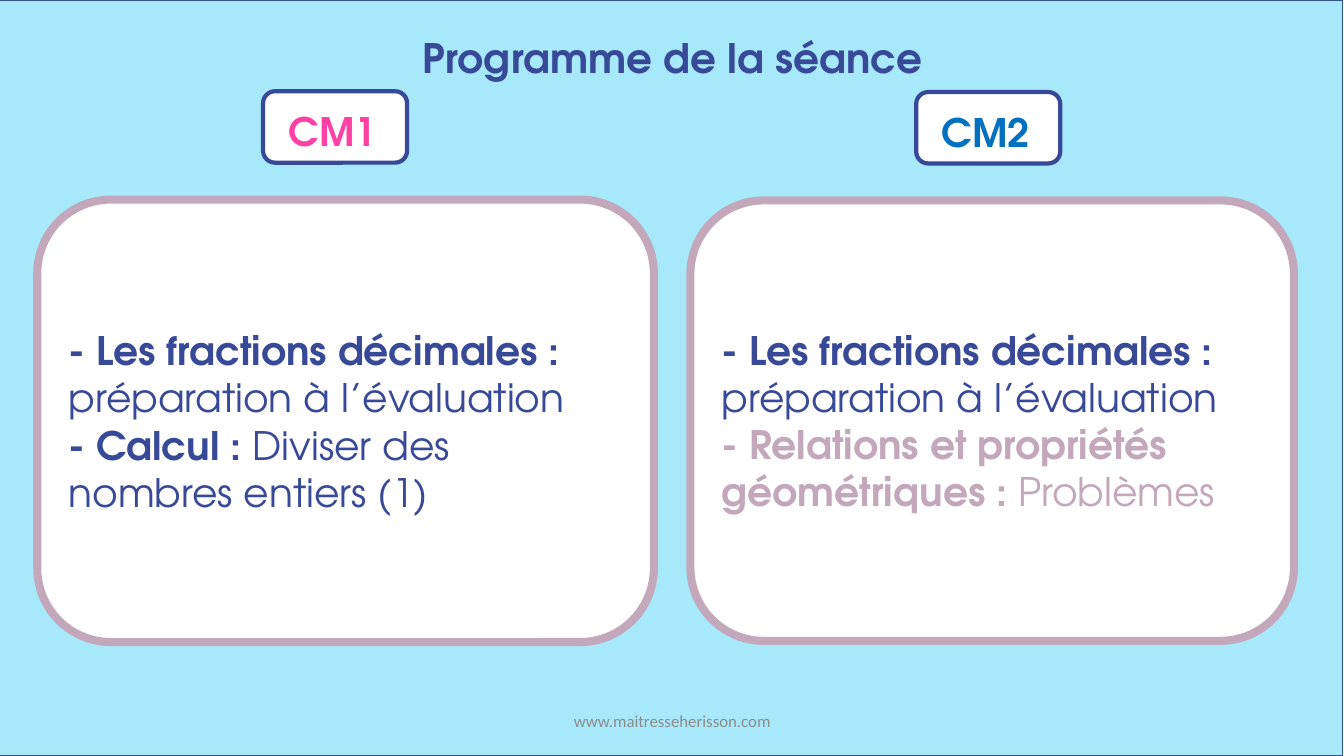
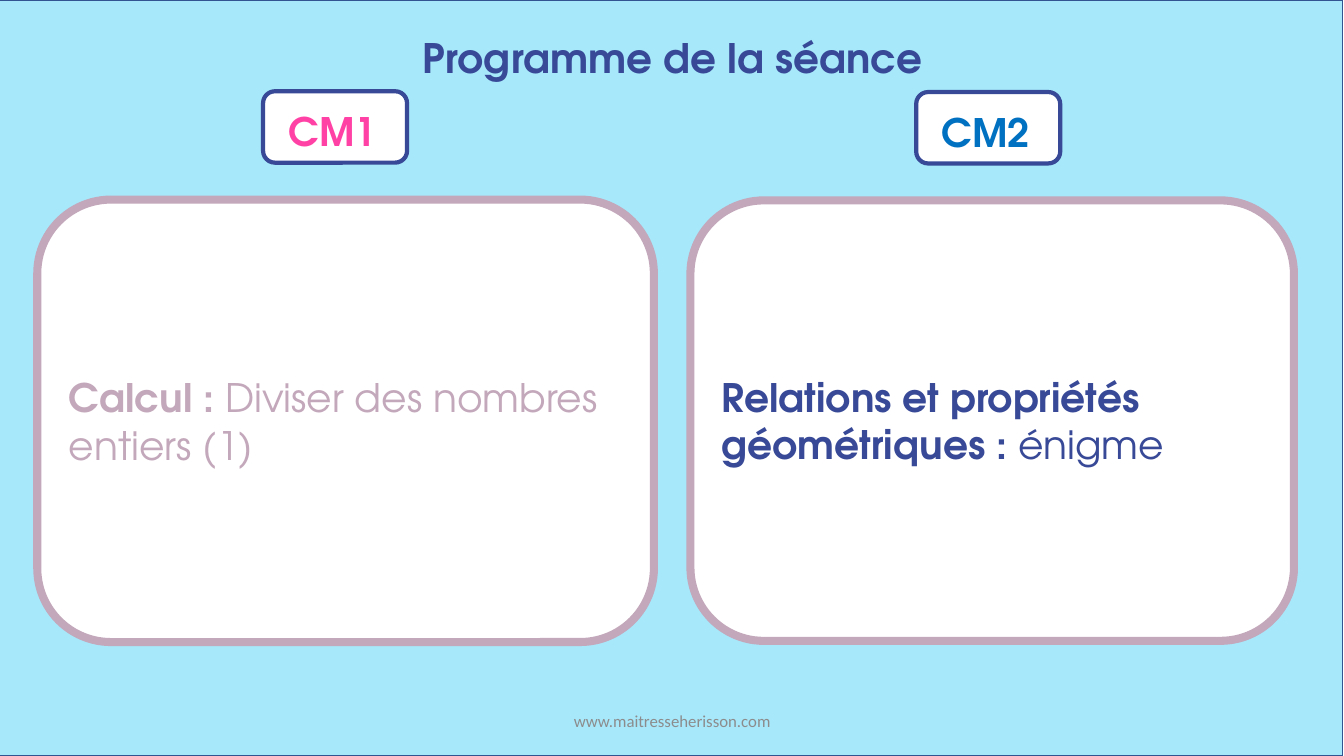
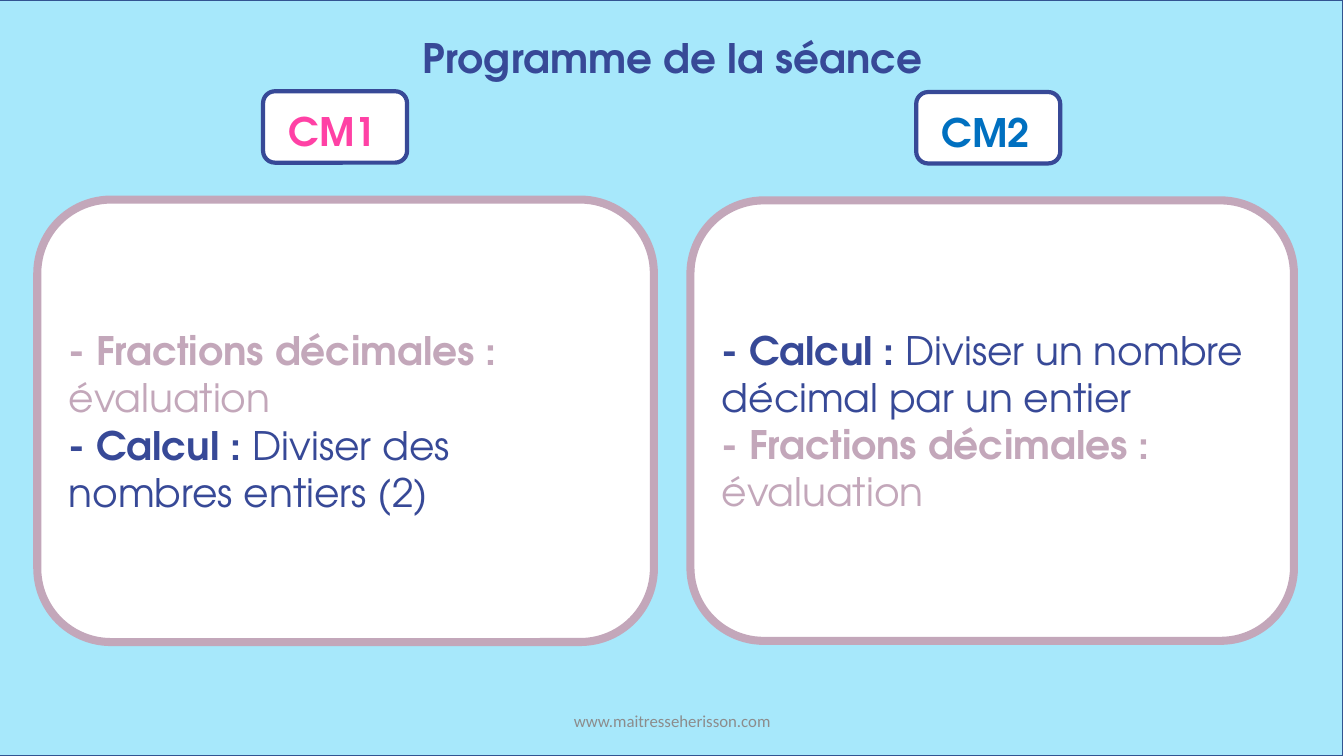
from pptx import Presentation
from pptx.dml.color import RGBColor
from pptx.enum.shapes import MSO_SHAPE
from pptx.enum.text import MSO_ANCHOR, MSO_AUTO_SIZE, PP_ALIGN
from pptx.util import Cm, Pt

RECT, ROUND = MSO_SHAPE.RECTANGLE, MSO_SHAPE.ROUNDED_RECTANGLE
TOP, MIDDLE = MSO_ANCHOR.TOP, MSO_ANCHOR.MIDDLE
LEFT, CENTER = PP_ALIGN.LEFT, PP_ALIGN.CENTER
FIXED = MSO_AUTO_SIZE.NONE

SKY = RGBColor(0xA7, 0xE8, 0xFB)
EDGE = RGBColor(0x32, 0x54, 0x91)
WHITE = RGBColor(0xFF, 0xFF, 0xFF)
NAVY = RGBColor(0x37, 0x49, 0x97)
MAUVE = RGBColor(0xC3, 0xA7, 0xBA)
PINK = RGBColor(0xFF, 0x41, 0xA5)
BLUE = RGBColor(0x00, 0x70, 0xC0)
GREY = RGBColor(0x8C, 0x8C, 0x8C)
FONT = "TeX Gyre Adventor"

WIDTH, HEIGHT = 33.87, 19.05
CLASSES = [
    ("CM1", PINK, (0.94, 5.03, 15.54, 11.15)),
    ("CM2", BLUE, (17.4, 5.05, 15.21, 11.1)),
]
FRACTIONS = ("- Les fractions décimales : ", "préparation à l’évaluation", NAVY)
TEST = ("- Fractions décimales : ", "évaluation", MAUVE)
PLANS = [
    (
        [FRACTIONS, ("- Calcul : ", "Diviser des nombres entiers (1)", NAVY)],
        [FRACTIONS, ("- Relations et propriétés géométriques : ", "Problèmes", MAUVE)],
    ),
    (
        [("Calcul : ", "Diviser des nombres entiers (1)", MAUVE)],
        [("Relations et propriétés géométriques : ", "énigme", NAVY)],
    ),
    (
        [TEST, ("- Calcul : ", "Diviser des nombres entiers (2)", NAVY)],
        [("- Calcul : ", "Diviser un nombre décimal par un entier", NAVY), TEST],
    ),
]


def lengths(box):
    """Turn a box in centimetres into lengths."""
    return [Cm(side) for side in box]


def add_run(para, text, color, size=28, bold=True, font=FONT):
    """Add one formatted run to a paragraph."""
    run = para.add_run()
    run.text = text
    run.font.name = font
    run.font.size = Pt(size)
    run.font.bold = bold
    run.font.color.rgb = color


def set_frame(shape, anchor):
    """Wrap the text of a shape at a fixed size and return its frame."""
    frame = shape.text_frame
    frame.word_wrap = True
    frame.auto_size = FIXED
    frame.vertical_anchor = anchor
    return frame


def add_box(shapes, kind, box, fill, line, weight):
    """Add a filled and outlined shape."""
    shape = shapes.add_shape(kind, *lengths(box))
    shape.shadow.inherit = False
    shape.fill.solid()
    shape.fill.fore_color.rgb = fill
    shape.line.color.rgb = line
    shape.line.width = Pt(weight)
    return shape


def add_badge(slide, left, top, name, color):
    """Add the class name in its grouped badge."""
    parts = slide.shapes.add_group_shape().shapes
    add_box(parts, ROUND, (left, top, 3.63, 1.8), WHITE, NAVY, 3)
    label = parts.add_textbox(*lengths((left + 0.4, top + 0.28, 2.79, 1.45)))
    add_run(set_frame(label, TOP).paragraphs[0], name, color)


def add_panel(slide, box, tasks):
    """Add the rounded panel listing the tasks of a class."""
    panel = add_box(slide.shapes, ROUND, box, WHITE, MAUVE, 5.75)
    frame = set_frame(panel, MIDDLE)
    for index, (topic, detail, color) in enumerate(tasks):
        para = frame.add_paragraph() if index else frame.paragraphs[0]
        para.alignment = LEFT
        add_run(para, topic, color)
        add_run(para, detail, color, bold=False)


def add_class(slide, box, name, color, tasks):
    """Add a class column: its panel and the badge above it."""
    add_panel(slide, box, tasks)
    add_badge(slide, box[0] + 5.69, box[1] - 2.73, name, color)


def add_base(slide):
    """Add the backdrop, title and footer shared by all slides."""
    back = add_box(slide.shapes, RECT, (-0.03, 0, WIDTH, HEIGHT), SKY, EDGE, 1)
    slide.shapes._spTree.insert(2, back._element)

    title = slide.shapes.title
    title.left, title.top, title.width, title.height = lengths((0.03, 0.69, WIDTH, 1.5))
    para = set_frame(title, TOP).paragraphs[0]
    para.alignment = CENTER
    add_run(para, "Programme de la séance", NAVY, size=29)

    foot = slide.shapes.add_textbox(*lengths((11.23, 17.65, 11.43, 1.02)))
    para = set_frame(foot, MIDDLE).paragraphs[0]
    para.alignment = CENTER
    add_run(para, "www.maitresseherisson.com", GREY, 12, False, "Calibri")


def main():
    """Build one slide for each session plan."""
    deck = Presentation()
    deck.slide_width, deck.slide_height = Cm(WIDTH), Cm(HEIGHT)
    for plan in PLANS:
        slide = deck.slides.add_slide(deck.slide_layouts[5])
        add_base(slide)
        for (name, color, box), tasks in zip(CLASSES, plan):
            add_class(slide, box, name, color, tasks)
    deck.save("out.pptx")


if __name__ == "__main__":
    main()
